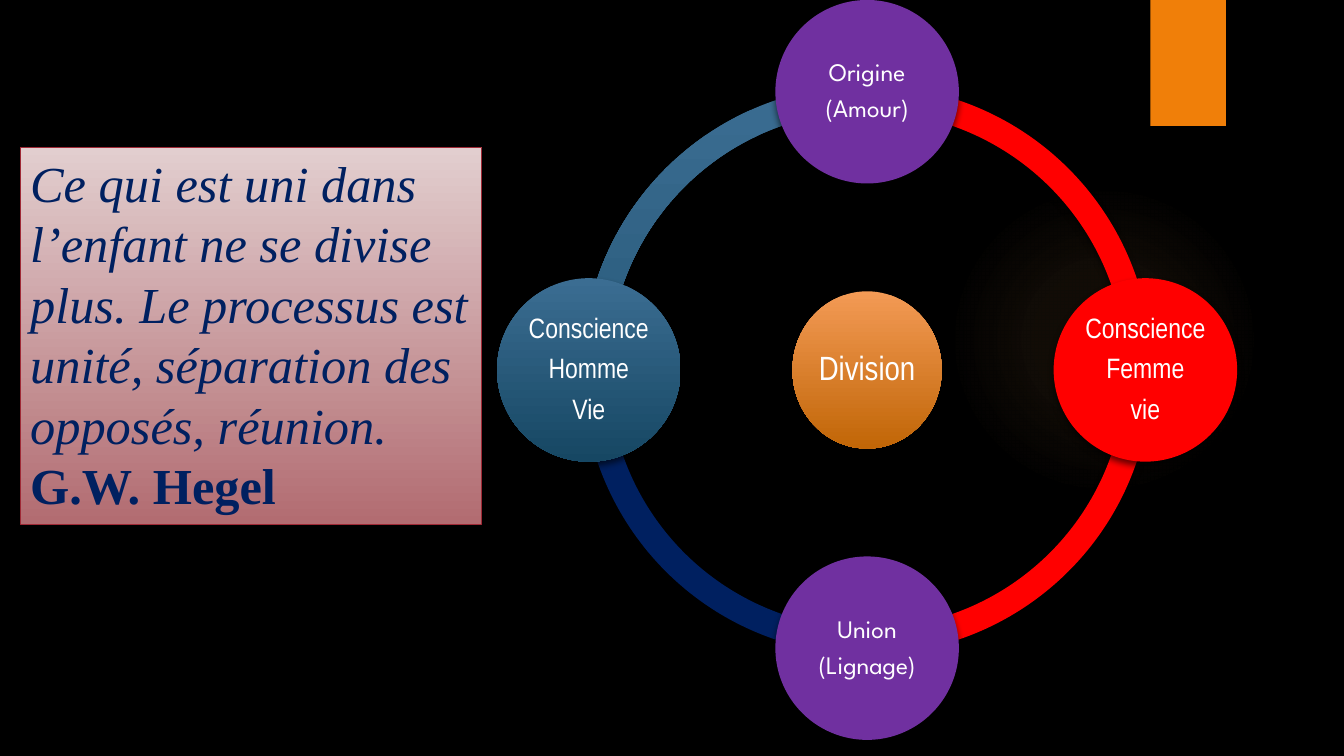
from lxml import etree
from pptx import Presentation
from pptx.dml.color import RGBColor
from pptx.enum.shapes import MSO_SHAPE
from pptx.enum.text import MSO_ANCHOR, MSO_AUTO_SIZE, PP_ALIGN
from pptx.oxml.ns import qn
from pptx.util import Inches, Pt

OVAL, RECTANGLE, ARC = MSO_SHAPE.OVAL, MSO_SHAPE.RECTANGLE, MSO_SHAPE.BLOCK_ARC
MIDDLE, TOP = MSO_ANCHOR.MIDDLE, MSO_ANCHOR.TOP
CENTER, LEFT = PP_ALIGN.CENTER, PP_ALIGN.LEFT
GROW = MSO_AUTO_SIZE.SHAPE_TO_FIT_TEXT

BLACK = RGBColor(0x00, 0x00, 0x00)
WHITE = RGBColor(0xFF, 0xFF, 0xFF)
ORANGE = RGBColor(0xF0, 0x7F, 0x09)
GLOW = RGBColor(0xF9, 0xB2, 0x68)
RED = RGBColor(0xFF, 0x00, 0x00)
PURPLE = RGBColor(0x70, 0x30, 0xA0)
NAVY = RGBColor(0x00, 0x20, 0x60)
CRIMSON = RGBColor(0x9F, 0x29, 0x36)
BLUE_FADE = (RGBColor(0x3B, 0x6D, 0x92), RGBColor(0x16, 0x47, 0x63))
ORANGE_FADE = (RGBColor(0xF3, 0x9A, 0x55), RGBColor(0xC1, 0x66, 0x07))
ROSE_FADE = (RGBColor(0xE2, 0xCE, 0xCF), RGBColor(0xB2, 0x6C, 0x71))

NARROW, SPARTAN, SERIF = "Arial Narrow", "League Spartan", "Times New Roman"

CENTER_X, CENTER_Y = 8.6, 3.67
RING_SIZE, ORBIT, NODE_SIZE = 5.65, 2.76, 1.82
RING_THICKNESS = 0.046
# Block arc angles are in 60000ths of a degree, adjustments in 100000ths.
ANGLE_UNIT = 0.6

# Start angle, end angle and fill of each quarter of the ring
QUARTERS = [
    (180, 270, BLUE_FADE),
    (90, 180, NAVY),
    (0, 90, RED),
    (270, 0, RED),
]
# Direction from the centre, fill, font, size and lines of each stage
STAGES = [
    (0, -1, PURPLE, SPARTAN, 18, ["Origine", "(Amour)"]),
    (1, 0, RED, NARROW, 20, ["Conscience", "Femme", "vie"]),
    (0, 1, PURPLE, SPARTAN, 18, ["Union", "(Lignage)"]),
    (-1, 0, BLUE_FADE, NARROW, 20, ["Conscience", "Homme", "Vie"]),
]
QUOTE = ("Ce qui est uni dans l’enfant ne se divise plus. "
         "Le processus est unité, séparation des opposés, réunion.")


def paint(shape, fill):
    """Fill with one colour, or with a pair fading from top to bottom."""
    if isinstance(fill, RGBColor):
        shape.fill.solid()
        shape.fill.fore_color.rgb = fill
        return
    shape.fill.gradient()
    shape.fill.gradient_angle = 270
    for stop, color in zip(shape.fill.gradient_stops, fill):
        stop.color.rgb = color


def add_figure(slide, kind, left, top, width, height, fill):
    figure = slide.shapes.add_shape(
        kind, Inches(left), Inches(top), Inches(width), Inches(height))
    figure.shadow.inherit = False
    figure.line.fill.background()
    paint(figure, fill)
    return figure


def drop_shadow(shape, blur=5, distance=3, opacity=60):
    effects = shape._element.spPr.find(qn("a:effectLst"))
    shadow = etree.SubElement(
        effects, qn("a:outerShdw"), blurRad=str(Pt(blur)),
        dist=str(Pt(distance)), dir="5400000", rotWithShape="0")
    color = etree.SubElement(shadow, qn("a:srgbClr"), val=str(BLACK))
    etree.SubElement(color, qn("a:alpha"), val=str(opacity * 1000))


def add_glow(slide):
    """Add the faint round light that fades out towards its rim."""
    glow = add_figure(slide, OVAL, 9.41, 1.83, 3.08, 3.08, GLOW)
    solid = glow._element.spPr.find(qn("a:solidFill"))
    gradient = etree.Element(qn("a:gradFill"))
    stops = etree.SubElement(gradient, qn("a:gsLst"))
    for position, opacity in ((0, 7), (36, 6), (69, 0)):
        stop = etree.SubElement(stops, qn("a:gs"), pos=str(position * 1000))
        color = etree.SubElement(stop, qn("a:srgbClr"), val=str(GLOW))
        etree.SubElement(color, qn("a:alpha"), val=str(opacity * 1000))
    focus = etree.SubElement(gradient, qn("a:path"), path="circle")
    etree.SubElement(focus, qn("a:fillToRect"),
                     l="50000", t="50000", r="50000", b="50000")
    solid.getparent().replace(solid, gradient)


def space_after_percent(paragraph, percent):
    paragraph.space_after = Pt(0)
    spacing = paragraph._p.pPr.find(qn("a:spcAft"))
    spacing.clear()
    etree.SubElement(spacing, qn("a:spcPct"), val=str(percent * 1000))


def add_ring(slide):
    for start, end, fill in QUARTERS:
        quarter = add_figure(
            slide, ARC, CENTER_X - RING_SIZE / 2, CENTER_Y - RING_SIZE / 2,
            RING_SIZE, RING_SIZE, fill)
        quarter.adjustments[0] = start * ANGLE_UNIT
        quarter.adjustments[1] = end * ANGLE_UNIT
        quarter.adjustments[2] = RING_THICKNESS
        drop_shadow(quarter)


def add_disc(slide, x, y, width, height, fill, font_name, size, lines):
    """Add a labelled ellipse centred on x, y."""
    disc = add_figure(slide, OVAL, x - width / 2, y - height / 2,
                      width, height, fill)
    drop_shadow(disc)
    label = disc.text_frame
    label.margin_left = label.margin_right = Inches(0.03)
    label.margin_top = label.margin_bottom = Inches(0.03)
    label.vertical_anchor = MIDDLE
    label.text = "\n".join(lines)
    for line in label.paragraphs:
        line.alignment = CENTER
        line.line_spacing = 0.9
        space_after_percent(line, 35)
        line.font.name = font_name
        line.font.size = Pt(size)
        line.font.color.rgb = WHITE


def add_quote(slide):
    panel = add_figure(slide, RECTANGLE, 0.2, 1.46, 4.58, 3.74, ROSE_FADE)
    panel.line.color.rgb = CRIMSON
    panel.line.width = Pt(0.75)
    frame = panel.text_frame
    frame.word_wrap = True
    frame.auto_size = GROW
    frame.vertical_anchor = TOP
    frame.text = QUOTE
    words, author = frame.paragraphs[0], frame.add_paragraph()
    author.text = "G.W. Hegel"
    for paragraph in (words, author):
        paragraph.alignment = LEFT
        paragraph.font.name = SERIF
        paragraph.font.size = Pt(36)
        paragraph.font.color.rgb = NAVY
    words.font.italic = True
    author.font.bold = True


def main():
    deck = Presentation()
    deck.slide_width, deck.slide_height = Inches(13.33), Inches(7.5)
    slide = deck.slides.add_slide(deck.slide_layouts[6])
    slide.background.fill.solid()
    slide.background.fill.fore_color.rgb = BLACK

    add_glow(slide)
    tab = add_figure(slide, RECTANGLE, 11.41, 0, 0.75, 1.25, ORANGE)
    drop_shadow(tab, blur=3, distance=2, opacity=45)

    add_ring(slide)
    add_disc(slide, CENTER_X, CENTER_Y, 1.48, 1.56,
             ORANGE_FADE, NARROW, 24, ["Division"])
    for across, down, fill, font_name, size, lines in STAGES:
        add_disc(slide, CENTER_X + across * ORBIT, CENTER_Y + down * ORBIT,
                 NODE_SIZE, NODE_SIZE, fill, font_name, size, lines)
    add_quote(slide)
    deck.save("out.pptx")


if __name__ == "__main__":
    main()
